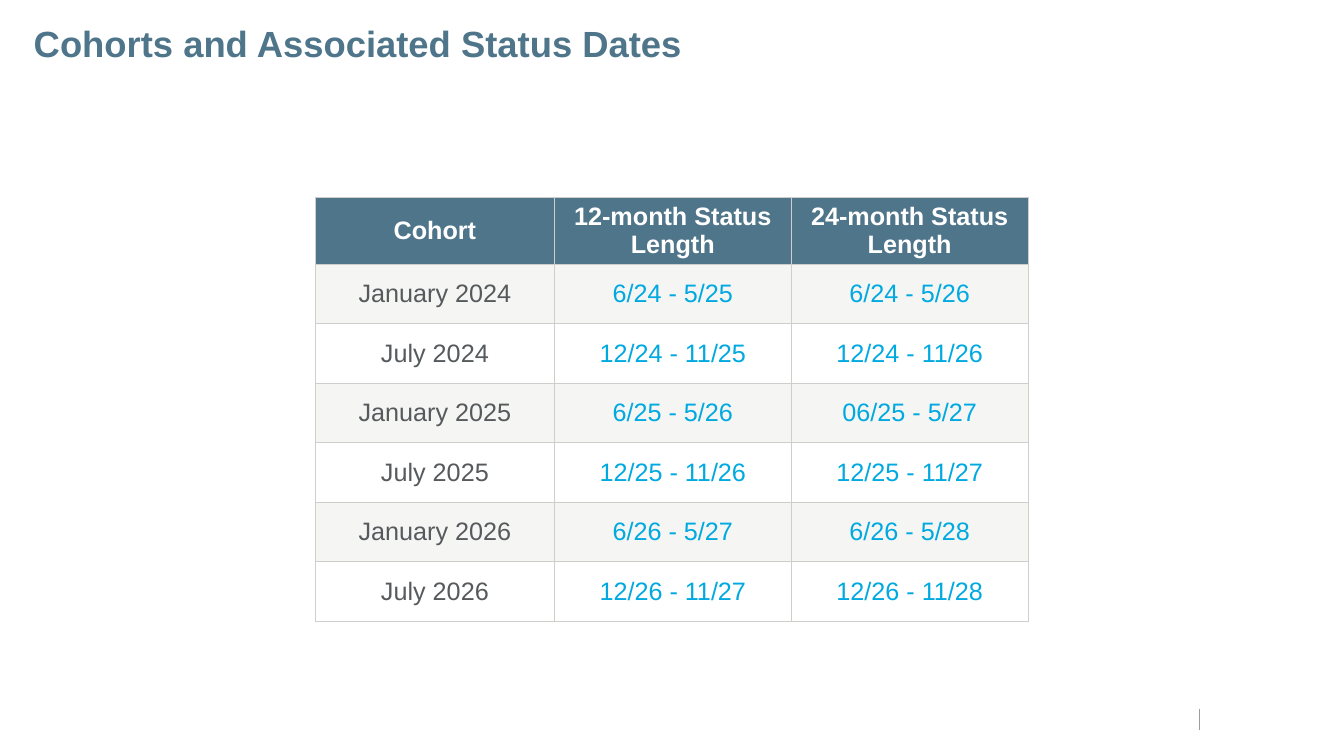
from pptx import Presentation
from pptx.dml.color import RGBColor
from pptx.enum import text
from pptx.oxml import parse_xml
from pptx.oxml.ns import nsdecls
from pptx.util import Cm, Pt

HUES = {"head": "4F758B", "white": "FFFFFF", "body": "565A5C",
        "date": "00A9E0", "grid": "CECFCB", "rule": "989D9F"}
ROWS = [
    ("Cohort", "12-month Status Length", "24-month Status Length"),
    ("January 2024", "6/24 - 5/25", "6/24 - 5/26"),
    ("July 2024", "12/24 - 11/25", "12/24 - 11/26"),
    ("January 2025", "6/25 - 5/26", "06/25 - 5/27"),
    ("July 2025", "12/25 - 11/26", "12/25 - 11/27"),
    ("January 2026", "6/26 - 5/27", "6/26 - 5/28"),
    ("July 2026", "12/26 - 11/27", "12/26 - 11/28"),
]


def hue(name):
    """Return the named colour."""
    return RGBColor.from_string(HUES[name])


def style(para, size, name, bold):
    """Format the runs of a paragraph."""
    for run in para.runs:
        font = run.font
        font.name, font.size, font.bold = "Arial", Pt(size), bold
        font.color.rgb = hue(name)


def add_title(slide, left, top, width, height):
    """Place and format the slide title."""
    title = slide.shapes.title
    title.left, title.top, title.width, title.height = left, top, width, height
    frame = title.text_frame
    frame.text = "Cohorts and Associated Status Dates"
    frame.word_wrap = True
    frame.auto_size = text.MSO_AUTO_SIZE.NONE
    frame.vertical_anchor = text.MSO_ANCHOR.TOP
    frame.margin_left = frame.margin_top = frame.margin_bottom = 0
    frame.margin_right = Cm(0.25)
    para = frame.paragraphs[0]
    para.alignment = text.PP_ALIGN.LEFT
    para.line_spacing = 0.9
    style(para, 26, "head", True)


def add_grid(cell):
    """Draw thin lines on all four sides of a cell."""
    props = cell._tc.get_or_add_tcPr()
    for side in "LRTB":
        props.append(parse_xml(
            f'<a:ln{side} {nsdecls("a")} w="{Pt(0.75)}"><a:solidFill>'
            f'<a:srgbClr val="{HUES["grid"]}"/></a:solidFill></a:ln{side}>'))


def fill_cell(cell, row):
    """Fill the header solid and every second body row with a pale tint."""
    if row and row % 2 == 0:
        cell.fill.background()
        return
    cell.fill.solid()
    cell.fill.fore_color.rgb = hue("grid" if row else "head")
    if row:
        tint = cell._tc.tcPr.find(".//{*}solidFill/{*}srgbClr[last()]")
        tint = cell._tc.tcPr.xpath("./a:solidFill/a:srgbClr")[0]
        tint.append(parse_xml(f'<a:alpha {nsdecls("a")} val="20000"/>'))


def add_dates(slide, left, top, width, height):
    """Build the table of cohorts and status dates."""
    table = slide.shapes.add_table(
        len(ROWS), len(ROWS[0]), left, top, width, height).table
    for col, size in zip(table.columns, (6.02, 5.97, 5.97)):
        col.width = Cm(size)
    for r, words in enumerate(ROWS):
        table.rows[r].height = Cm(1.5)
        for c, word in enumerate(words):
            cell = table.cell(r, c)
            cell.text = word
            cell.vertical_anchor = text.MSO_ANCHOR.MIDDLE
            para = cell.text_frame.paragraphs[0]
            para.alignment = text.PP_ALIGN.CENTER
            name = "white" if r == 0 else "date" if c else "body"
            style(para, 18, name, r == 0)
            add_grid(cell)
            fill_cell(cell, r)


def add_rule(slide, left, top, height):
    """Draw the short upright rule in the footer."""
    rule = slide.shapes.add_connector(1, left, top, left, top + height)
    rule.line.color.rgb = hue("rule")
    rule.line.width = Pt(1)
    rule._element.spPr.append(parse_xml(f'<a:effectLst {nsdecls("a")}/>'))


def main():
    """Build and save the slide."""
    deck = Presentation()
    deck.slide_width, deck.slide_height = Cm(33.87), Cm(19.05)
    slide = deck.slides.add_slide(deck.slide_layouts[5])
    add_rule(slide, Cm(30.23), Cm(17.86), Cm(0.53))
    add_title(slide, Cm(0.85), Cm(0.66), Cm(32.18), Cm(1.04))
    add_dates(slide, Cm(7.95), Cm(4.98), Cm(17.96), Cm(10.77))
    deck.save("out.pptx")


if __name__ == "__main__":
    main()
